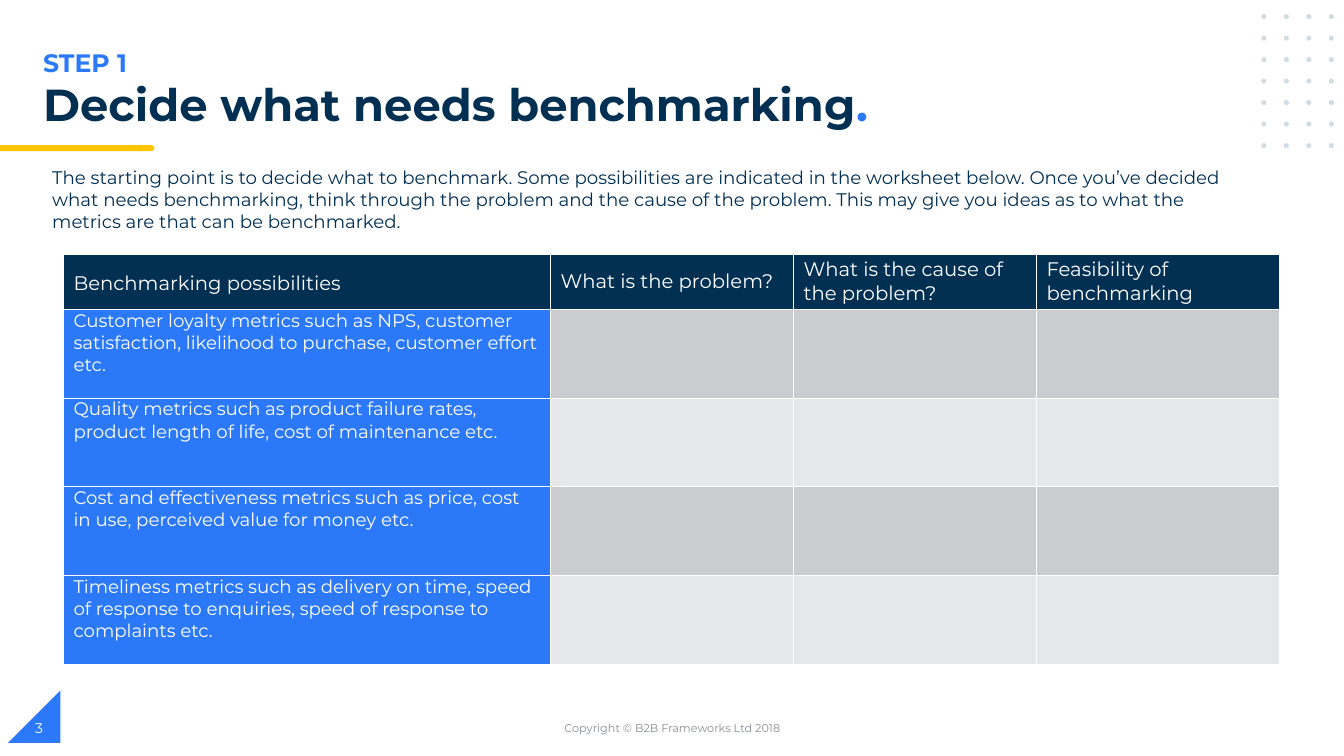
from itertools import product

from pptx import Presentation
from pptx.dml.color import RGBColor
from pptx.enum.shapes import MSO_SHAPE
from pptx.enum.text import MSO_ANCHOR, PP_ALIGN
from pptx.util import Inches, Pt

COLORS = {
    "navy": "023053", "blue": "2B79F8", "yellow": "FFC600", "dot": "D1DBE0",
    "white": "FFFFFF", "grey": "888C97", "dark_band": "CACCCF", "light_band": "E6E7E9",
}

prs = Presentation()
prs.slide_width, prs.slide_height = Inches(13.33), Inches(7.5)
s = prs.slides.add_slide(prs.slide_layouts[6])


def add_shape(kind, x, y, w, h, color):
    sp = s.shapes.add_shape(kind, Inches(x), Inches(y), Inches(w), Inches(h))
    sp.shadow.inherit = False
    sp.fill.solid()
    sp.fill.fore_color.rgb = RGBColor.from_string(COLORS[color])
    sp.line.fill.background()
    return sp


def add_run(p, text, size, color, bold=False):
    r = p.add_run()
    r.text = text
    for name, value in {"name": "Montserrat", "size": Pt(size), "bold": bold}.items():
        setattr(r.font, name, value)
    r.font.color.rgb = RGBColor.from_string(COLORS[color])


corner = add_shape(MSO_SHAPE.RIGHT_TRIANGLE, 0.08, 6.85, 0.52, 0.52, "blue")
corner._element.spPr.xfrm.set("flipH", "1")
add_shape(MSO_SHAPE.FLOWCHART_TERMINATOR, 1.34, 1.44, 0.19, 0.06, "yellow")
add_shape(MSO_SHAPE.RECTANGLE, 0, 1.44, 1.41, 0.06, "yellow")

for row, col in product(range(7), range(4)):
    add_shape(MSO_SHAPE.OVAL, 12.51 + 0.67 * col / 3, 0.14 + 1.28 * row / 6, 0.05, 0.05, "dot")

headers = [
    "Benchmarking possibilities", "What is the problem?",
    "What is the cause of the problem?", "Feasibility of benchmarking",
]
possibilities = [
    "Customer loyalty metrics such as NPS, customer satisfaction, likelihood to purchase, customer effort etc.",
    "Quality metrics such as product failure rates, product length of life, cost of maintenance etc.",
    "Cost and effectiveness metrics such as price, cost in use, perceived value for money etc.",
    "Timeliness metrics such as delivery on time, speed of response to enquiries, speed of response to complaints etc.",
]
rows = [headers] + [[text, "", "", ""] for text in possibilities]
widths = [4.83, 2.41, 2.41, 2.41]
heights = [0.55] + [0.88] * 4

table = s.shapes.add_table(
    len(rows), len(widths), Inches(0.63), Inches(2.52), Inches(sum(widths)), Inches(sum(heights))
).table
table.horz_banding = False
for column, width in zip(table.columns, widths):
    column.width = Inches(width)
for row, height in zip(table.rows, heights):
    row.height = Inches(height)

for i, texts in enumerate(rows):
    band = "dark_band" if i % 2 else "light_band"
    for j, text in enumerate(texts):
        cell = table.cell(i, j)
        fill = "navy" if i == 0 else "blue" if j == 0 else band
        cell.fill.solid()
        cell.fill.fore_color.rgb = RGBColor.from_string(COLORS[fill])
        cell.margin_top = cell.margin_bottom = 0
        cell.vertical_anchor = MSO_ANCHOR.TOP if i else MSO_ANCHOR.MIDDLE
        if text:
            add_run(cell.text_frame.paragraphs[0], text, 13 if i else 14, "white")
table.cell(0, 0).text_frame.paragraphs[0].line_spacing = 1.15

intro = (
    "The starting point is to decide what to benchmark. Some possibilities are indicated in the "
    "worksheet below. Once you’ve decided what needs benchmarking, think through the problem and "
    "the cause of the problem. This may give you ideas as to what the metrics are that can be benchmarked."
)
title = [("Decide what needs benchmarking", 32, "navy", True), (".", 32, "blue", True)]
footer = [("Copyright © B2B Frameworks Ltd 2018", 8, "grey")]
top, middle = MSO_ANCHOR.TOP, MSO_ANCHOR.MIDDLE
left, center = PP_ALIGN.LEFT, PP_ALIGN.CENTER
texts = [
    ((0.42, 1.6, 11.86, 0.76), top, left, 1, [(intro, 13, "navy")]),
    ((0.33, 0.77, 8.68, 0.56), top, left, 0.9, title),
    ((4.42, 7.02, 4.5, 0.4), middle, center, 1, footer),
    ((0.25, 7.02, 3, 0.4), middle, left, 1, [("3", 10, "white")]),
    ((0.33, 0.42, 6.69, 0.4), top, left, 1, [("STEP 1", 18, "blue", True)]),
]
for box, anchor, align, spacing, runs in texts:
    tf = s.shapes.add_textbox(*map(Inches, box)).text_frame
    tf.word_wrap = True
    tf.vertical_anchor = anchor
    p = tf.paragraphs[0]
    p.alignment = align
    p.line_spacing = spacing
    for run in runs:
        add_run(p, *run)

prs.save("out.pptx")
